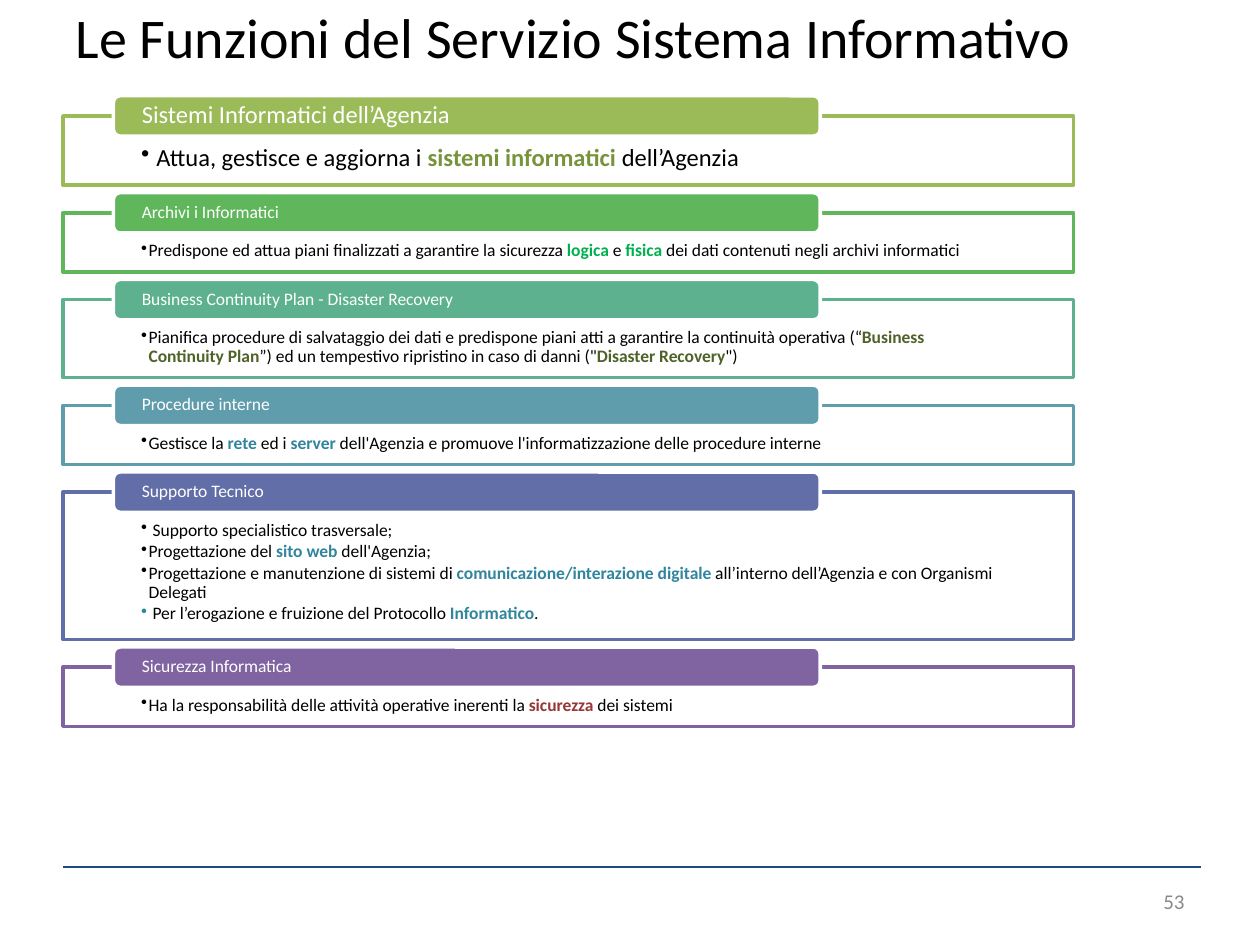
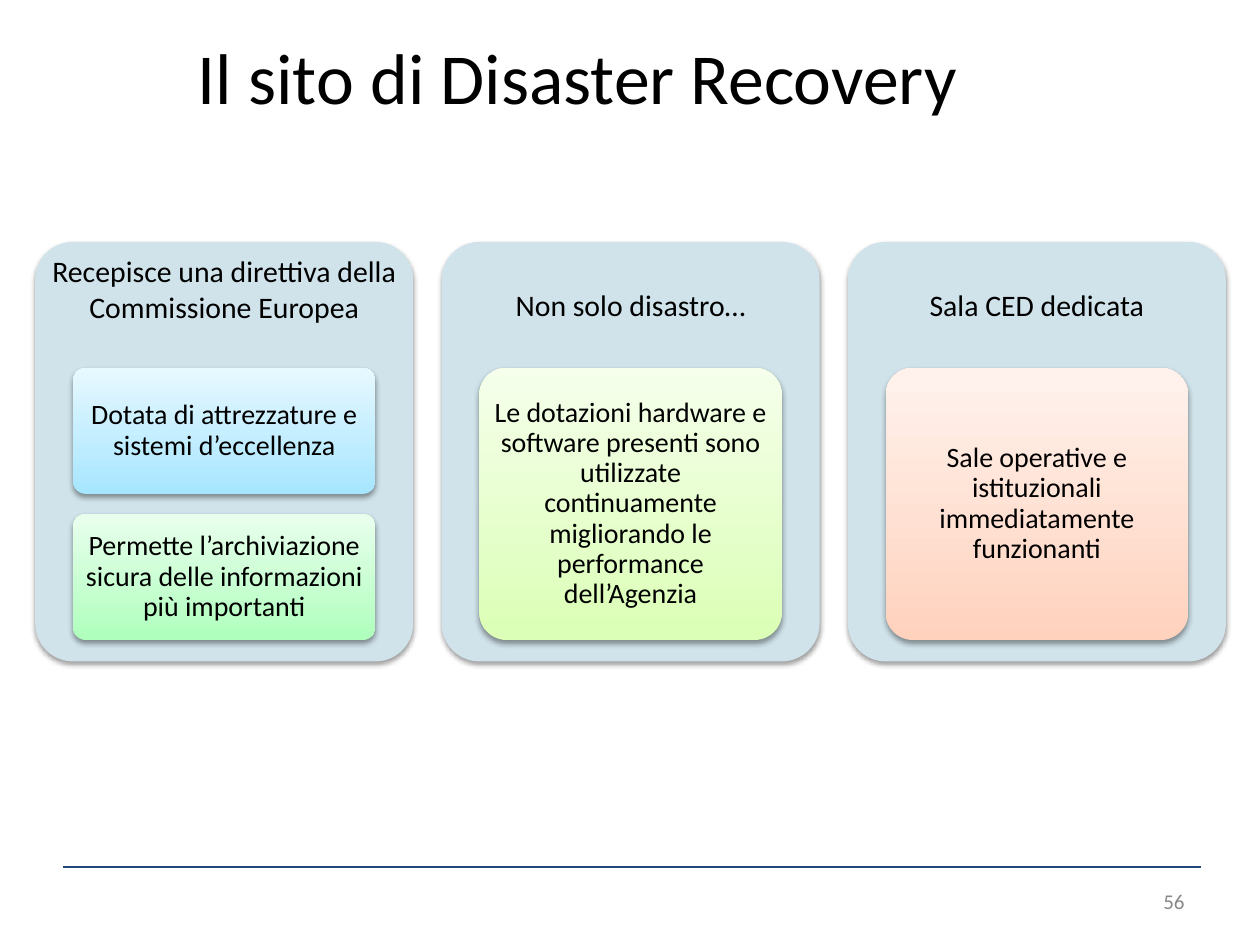
from lxml import etree
from pptx import Presentation
from pptx.dml.color import RGBColor
from pptx.enum.shapes import MSO_CONNECTOR, MSO_SHAPE
from pptx.enum.text import MSO_ANCHOR, MSO_AUTO_SIZE, PP_ALIGN
from pptx.oxml import parse_xml
from pptx.oxml.ns import nsdecls, qn
from pptx.util import Inches, Pt

RECT, ROUND = MSO_SHAPE.RECTANGLE, MSO_SHAPE.ROUNDED_RECTANGLE
LINE = MSO_CONNECTOR.STRAIGHT
TOP, MID = MSO_ANCHOR.TOP, MSO_ANCHOR.MIDDLE
LEFT, CENTER, RIGHT = PP_ALIGN.LEFT, PP_ALIGN.CENTER, PP_ALIGN.RIGHT
FIXED = MSO_AUTO_SIZE.NONE

BLACK = RGBColor(0x00, 0x00, 0x00)
WHITE = RGBColor(0xFF, 0xFF, 0xFF)
NAVY = RGBColor(0x1F, 0x49, 0x7D)
GREY = RGBColor(0x89, 0x89, 0x89)
OLIVE = RGBColor(0x9B, 0xBB, 0x59)
GREEN = RGBColor(0x5F, 0xB6, 0x5B)
JADE = RGBColor(0x5D, 0xB1, 0x8E)
TEAL = RGBColor(0x5F, 0x9D, 0xAC)
INDIGO = RGBColor(0x62, 0x6E, 0xA7)
PURPLE = RGBColor(0x80, 0x64, 0xA2)
MOSS = RGBColor(0x77, 0x93, 0x3C)
LEAF = RGBColor(0x00, 0xB0, 0x50)
FOREST = RGBColor(0x4F, 0x62, 0x28)
AQUA = RGBColor(0x31, 0x85, 0x9C)
BRICK = RGBColor(0x95, 0x37, 0x35)
PALE = RGBColor(0xD0, 0xE3, 0xEA)
SKY = RGBColor(0xA7, 0xE6, 0xFF), RGBColor(0xE7, 0xF8, 0xFF)
MINT = RGBColor(0xAF, 0xFF, 0xBD), RGBColor(0xE9, 0xFF, 0xED)
LIME = RGBColor(0xDB, 0xFF, 0xB6), RGBColor(0xF5, 0xFF, 0xEB)
PEACH = RGBColor(0xFF, 0xD2, 0xBD), RGBColor(0xFF, 0xF2, 0xED)

FONT = "Calibri"
WIDE, HIGH = Inches(10), Inches(7.5)
CELL = WIDE / 100

TASKS = [
    ("Sistemi Informatici dell’Agenzia", OLIVE, MOSS, 14, 5.5,
     ["Attua, gestisce e aggiorna i *sistemi informatici *dell’Agenzia"]),
    ("Archivi i Informatici", GREEN, LEAF, 10, 4.7,
     ["Predispone ed attua piani finalizzati a garantire la sicurezza *logica* e "
      "*fisica* dei dati contenuti negli archivi informatici"]),
    ("Business Continuity Plan - Disaster Recovery", JADE, FOREST, 10, 6.2,
     ["Pianifica procedure di salvataggio dei dati e predispone piani atti a "
      "garantire la continuità operativa (“*Business Continuity Plan*”) ed un "
      "tempestivo ripristino in caso di danni (\"*Disaster Recovery*\")"]),
    ("Procedure interne", TEAL, AQUA, 10, 4.7,
     ["Gestisce la *rete* ed i *server* dell'Agenzia e promuove "
      "l'informatizzazione delle procedure interne"]),
    ("Supporto Tecnico", INDIGO, AQUA, 10, 11.7,
     [" Supporto specialistico trasversale;",
      "Progettazione del *sito web *dell'Agenzia;",
      "Progettazione e manutenzione di sistemi di *comunicazione/interazione "
      "digitale *all’interno dell’Agenzia e con Organismi Delegati",
      "* *Per l’erogazione e fruizione del Protocollo *Informatico*."]),
    ("Sicurezza Informatica", PURPLE, BRICK, 10, 4.7,
     ["Ha la responsabilità delle attività operative inerenti la *sicurezza* dei sistemi"]),
]

CARDS = [
    ("Recepisce una direttiva della Commissione Europea", 7.4,
     [("Dotata di attrezzature e sistemi d’eccellenza", SKY),
      ("Permette l’archiviazione sicura delle informazioni più importanti", MINT)]),
    ("Non solo disastro…", 10,
     [("Le dotazioni hardware e software presenti sono utilizzate continuamente "
       "migliorando le performance dell’Agenzia", LIME)]),
    ("Sala CED dedicata", 10,
     [("Sale operative e istituzionali immediatamente funzionanti", PEACH)]),
]


def grid(*cells):
    return [round(n * CELL) for n in cells]


def setup(shape, anchor, pads):
    frame = shape.text_frame
    frame.word_wrap = True
    frame.auto_size = FIXED
    frame.vertical_anchor = anchor
    (frame.margin_left, frame.margin_top,
     frame.margin_right, frame.margin_bottom) = grid(*pads)
    return frame


def style(para, size, color, align=LEFT, space=1):
    para.alignment = align
    para.line_spacing = space
    para.font.name = FONT
    para.font.size = Pt(size)
    para.font.color.rgb = color


def write(shape, text, size, color, align=LEFT, anchor=MID, pads=(1, .5, 1, .5), space=1):
    para = setup(shape, anchor, pads).paragraphs[0]
    para.text = text
    style(para, size, color, align, space)


def label(slide, area, text, size, color, **look):
    write(slide.shapes.add_textbox(*grid(*area)), text, size, color, **look)


def block(slide, kind, area, fill, edge=None):
    shape = slide.shapes.add_shape(kind, *grid(*area))
    shape.shadow.inherit = False
    if isinstance(fill, RGBColor):
        shape.fill.solid()
        shape.fill.fore_color.rgb = fill
    else:
        shape.fill.gradient()
        shape.fill.gradient_angle = 90
        for stop, color in zip(shape.fill.gradient_stops, fill):
            stop.color.rgb = color
    if edge is None:
        shape.line.fill.background()
    else:
        shape.line.color.rgb = edge
        shape.line.width = Pt(2)
    return shape


def shade(shape):
    effects = shape._element.spPr.find(qn("a:effectLst"))
    effects.append(parse_xml(
        f'<a:outerShdw {nsdecls("a")} blurRad="{Pt(3.1)}" dist="{Pt(1.6)}" '
        'dir="5400000" rotWithShape="0"><a:srgbClr val="000000">'
        '<a:alpha val="38000"/></a:srgbClr></a:outerShdw>'))


def bullet(para, text, size, accent, hang):
    props = para._p.get_or_add_pPr()
    props.set("marL", str(hang))
    props.set("indent", str(-hang))
    etree.SubElement(props, qn("a:buChar")).set("char", "•")
    style(para, size, BLACK, space=.9)
    para.space_after = Pt(size * .15)
    for i, part in enumerate(text.split("*")):
        if part:
            run = para.add_run()
            run.text = part
            if i % 2:
                run.font.bold = True
                run.font.color.rgb = accent


def page(deck, title, area, size, number):
    slide = deck.slides.add_slide(deck.slide_layouts[5])
    head = slide.shapes.title
    head.left, head.top, head.width, head.height = grid(*area)
    write(head, title, size, BLACK, anchor=TOP, pads=(1, .2, 1, .2))
    x1, y1, x2, y2 = grid(5, 68.8, 95.3, 68.8)
    rule = slide.shapes.add_connector(LINE, x1, y1, x2, y2)
    rule.line.color.rgb = NAVY
    rule.line.width = Pt(1.5)
    etree.SubElement(rule._element.spPr, qn("a:effectLst"))
    label(slide, (71.7, 69.5, 23.3, 4), number, 12, GREY, align=RIGHT)
    return slide


def task(slide, top, name, color, accent, size, height, items):
    frame = block(slide, RECT, (5, top, 80.2, height), WHITE, color)
    text = setup(frame, TOP, (6.2, 2.3, 6.2, .8))
    for i, item in enumerate(items):
        para = text.add_paragraph() if i else text.paragraphs[0]
        bullet(para, item, size, accent, Inches(.12 if size > 10 else .06))
    tab = block(slide, ROUND, (9, top - 1.6, 56.1, 3.2), color, WHITE)
    write(tab, name, size, WHITE, pads=(2.1, 0, 2.1, 0), space=.9)


def card(slide, left, head, depth, items):
    back = block(slide, ROUND, (left, 19.2, 30, 33.3), PALE)
    back.adjustments[0] = .1
    shade(back)
    label(slide, (left, 19.2, 30, depth), head, 17, BLACK,
          align=CENTER, pads=(.7, .7, .7, .7))
    gap = 1.6
    height = (21.6 - gap * (len(items) - 1)) / len(items)
    for i, (text, fill) in enumerate(items):
        tile = block(slide, ROUND, (left + 3, 29.2 + i * (height + gap), 24, height), fill)
        tile.adjustments[0] = .1
        shade(tile)
        write(tile, text, 16, BLACK, CENTER, pads=(.4, .3, .4, .3), space=.9)


def main():
    deck = Presentation()
    deck.slide_width, deck.slide_height = WIDE, HIGH

    slide = page(deck, "Le Funzioni del Servizio Sistema Informativo",
                 (5, 0, 84.4, 8), 32, "53")
    top = 9.2
    for name, color, accent, size, height, items in TASKS:
        task(slide, top, name, color, accent, size, height, items)
        top += height + 2.19

    slide = page(deck, "Il sito di Disaster Recovery", (14.7, 2.4, 64, 7.9), 41, "56")
    for i, (head, depth, items) in enumerate(CARDS):
        card(slide, 2.8 + i * 32.25, head, depth, items)

    deck.save("out.pptx")


if __name__ == "__main__":
    main()
